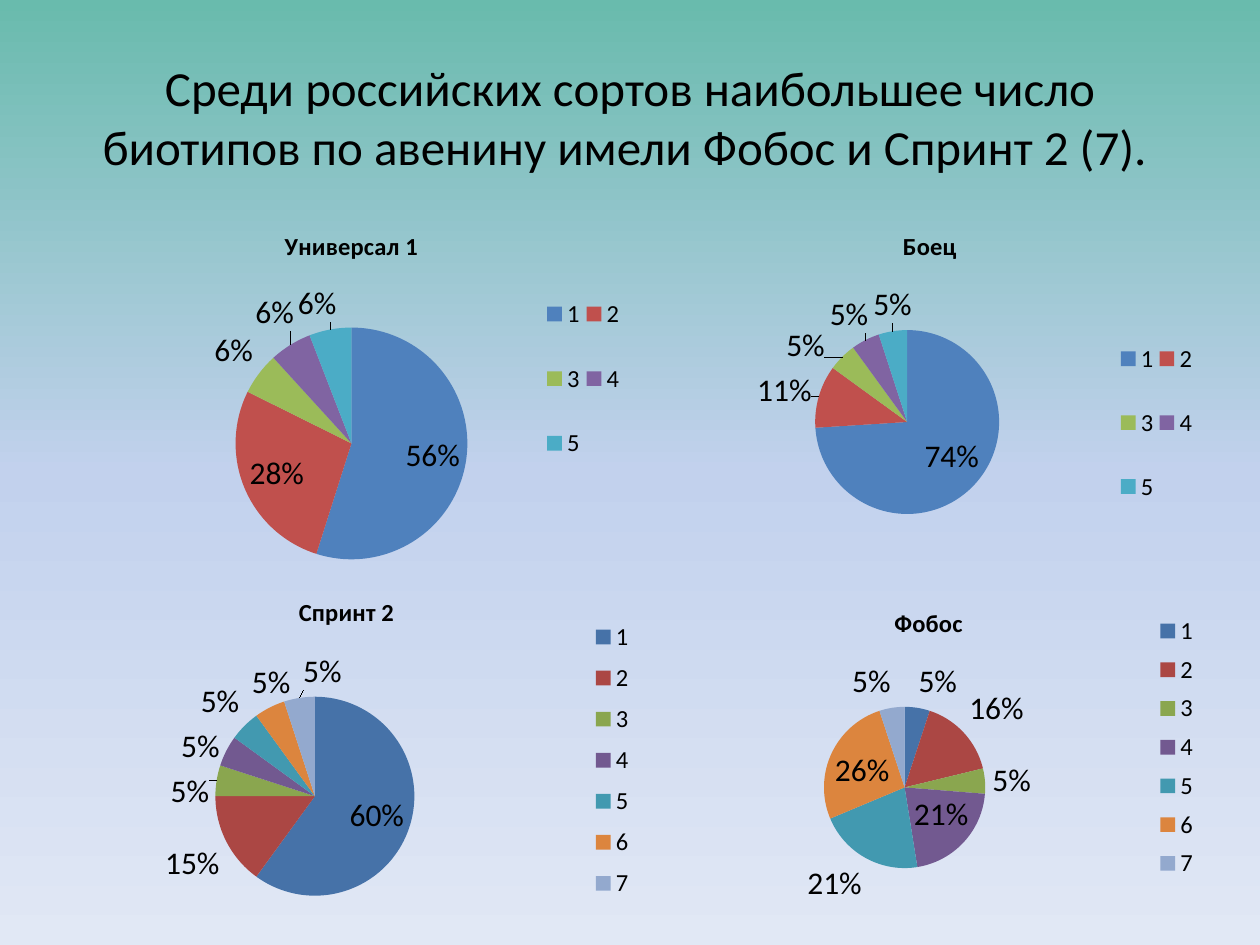
from copy import deepcopy
from dataclasses import dataclass

from lxml.etree import SubElement
from pptx import Presentation
from pptx.chart.data import CategoryChartData
from pptx.dml.color import RGBColor
from pptx.enum.chart import XL_CHART_TYPE, XL_LABEL_POSITION, XL_LEGEND_POSITION
from pptx.enum.text import MSO_ANCHOR, PP_ALIGN
from pptx.oxml.ns import qn
from pptx.util import Inches, Pt


@dataclass(frozen=True)
class Theme:
    font: str = "Calibri"
    text: str = "000000"
    background: tuple = ((0, "69BBAD"), (0.5, "C2D1ED"), (1, "E1E8F5"))
    five_slices: tuple = ("4F81BD", "C0504D", "9BBB59", "8064A2", "4BACC6")
    seven_slices: tuple = ("4672A8", "AB4744", "8AA64F", "725990", "4299B0", "DC853E", "93A9CE")
    title_size: int = 28
    label_size: int = 18
    small_size: int = 14


theme = Theme()


def style_font(font, size, bold=False):
    font.name = theme.font
    font.size = Pt(size)
    font.bold = bold
    font.color.rgb = RGBColor.from_string(theme.text)


def place_part(parent, frame, box, inner=False):
    """Fix a plot area or legend at a slide position, given in inches."""
    layout = parent.find(qn("c:layout"))
    if layout is None:
        layout = SubElement(parent, qn("c:layout"))
        parent.remove(layout)
        parent.insert(1 if parent.tag == qn("c:legend") else 0, layout)
    manual = SubElement(layout, qn("c:manualLayout"))
    settings = [("layoutTarget", "inner")] if inner else []
    settings += [("xMode", "edge"), ("yMode", "edge")]
    left, top, width, height = frame
    settings += [
        ("x", (box[0] - left) / width),
        ("y", (box[1] - top) / height),
        ("w", box[2] / width),
        ("h", box[3] / height),
    ]
    for name, value in settings:
        text = value if isinstance(value, str) else f"{value:.4f}"
        SubElement(manual, qn(f"c:{name}")).set("val", text)


presentation = Presentation()
presentation.slide_width = Inches(10)
presentation.slide_height = Inches(7.5)
slide = presentation.slides.add_slide(presentation.slide_layouts[6])

# Background
fill = slide.background.fill
fill.gradient()
fill.gradient_angle = 270
stop_list = slide.element.find(".//" + qn("a:gsLst"))
stop_list.insert(1, deepcopy(stop_list[0]))
for stop, (position, color) in zip(fill.gradient_stops, theme.background):
    stop.position = position
    stop.color.rgb = RGBColor.from_string(color)

# Title
title = slide.shapes.add_textbox(Inches(0.5), Inches(0.3), Inches(9), Inches(1.25))
title.text_frame.word_wrap = True
title.text_frame.vertical_anchor = MSO_ANCHOR.MIDDLE
paragraph = title.text_frame.paragraphs[0]
paragraph.alignment = PP_ALIGN.CENTER
run = paragraph.add_run()
run.text = "Среди российских сортов наибольшее число биотипов по авенину имели Фобос и Спринт 2 (7). "
style_font(run.font, theme.title_size)

# Variety, chart frame, pie centre and radius, legend box, shares in percent
charts = [
    ("Боец", (5.17, 1.67, 4.42, 2.75), (7.2, 3.35, 0.73), (8.85, 2.46, 0.66, 1.79),
     (74, 11, 5, 5, 5)),
    ("Спринт 2", (0.25, 4.58, 5, 2.75), (2.5, 6.32, 0.79), (4.65, 4.85, 0.42, 2.37),
     (60, 15, 5, 5, 5, 5, 5)),
    ("Универсал 1", (0.5, 1.67, 4.58, 2.92), (2.79, 3.52, 0.92), (4.29, 2.1, 0.68, 1.81),
     (56, 28, 6, 6, 6)),
    ("Фобос", (5.08, 4.67, 4.58, 2.67), (7.18, 6.25, 0.64), (9.13, 4.82, 0.42, 2.22),
     (5, 16, 5, 21, 21, 26, 5)),
]

for variety, frame, (center_x, center_y, radius), legend_box, shares in charts:
    data = CategoryChartData()
    data.categories = [str(number + 1) for number in range(len(shares))]
    data.add_series(variety if variety == "Фобос" else "Series 1", shares)
    chart = slide.shapes.add_chart(
        XL_CHART_TYPE.PIE, *(Inches(length) for length in frame), data
    ).chart
    style_font(chart.font, theme.label_size)

    chart.has_title = True
    run = chart.chart_title.text_frame.paragraphs[0].add_run()
    run.text = variety
    style_font(run.font, theme.small_size, bold=True)
    chart.chart_title.include_in_layout = False

    chart.has_legend = True
    chart.legend.position = XL_LEGEND_POSITION.RIGHT
    chart.legend.include_in_layout = False
    style_font(chart.legend.font, theme.small_size)

    plot = chart.plots[0]
    plot.vary_by_categories = True
    colors = theme.five_slices if len(shares) == 5 else theme.seven_slices
    for index, color in enumerate(colors):
        slice_fill = plot.series[0].points[index].format.fill
        slice_fill.solid()
        slice_fill.fore_color.rgb = RGBColor.from_string(color)

    plot.has_data_labels = True
    labels = plot.data_labels
    style_font(labels.font, theme.label_size)
    labels.position = XL_LABEL_POSITION.BEST_FIT
    # Rounded shares that no longer sum to 100 are labelled by value
    exact = all(round(100 * share / sum(shares)) == share for share in shares)
    labels.show_percentage = exact
    labels.show_value = not exact
    labels.number_format = "0%" if exact else '0"%"'
    labels.number_format_is_linked = False

    chart_element = chart.element.find(qn("c:chart"))
    pie_box = (center_x - radius, center_y - radius, 2 * radius, 2 * radius)
    place_part(chart_element.find(qn("c:plotArea")), frame, pie_box, inner=True)
    place_part(chart_element.find(qn("c:legend")), frame, legend_box)

presentation.save("out.pptx")
